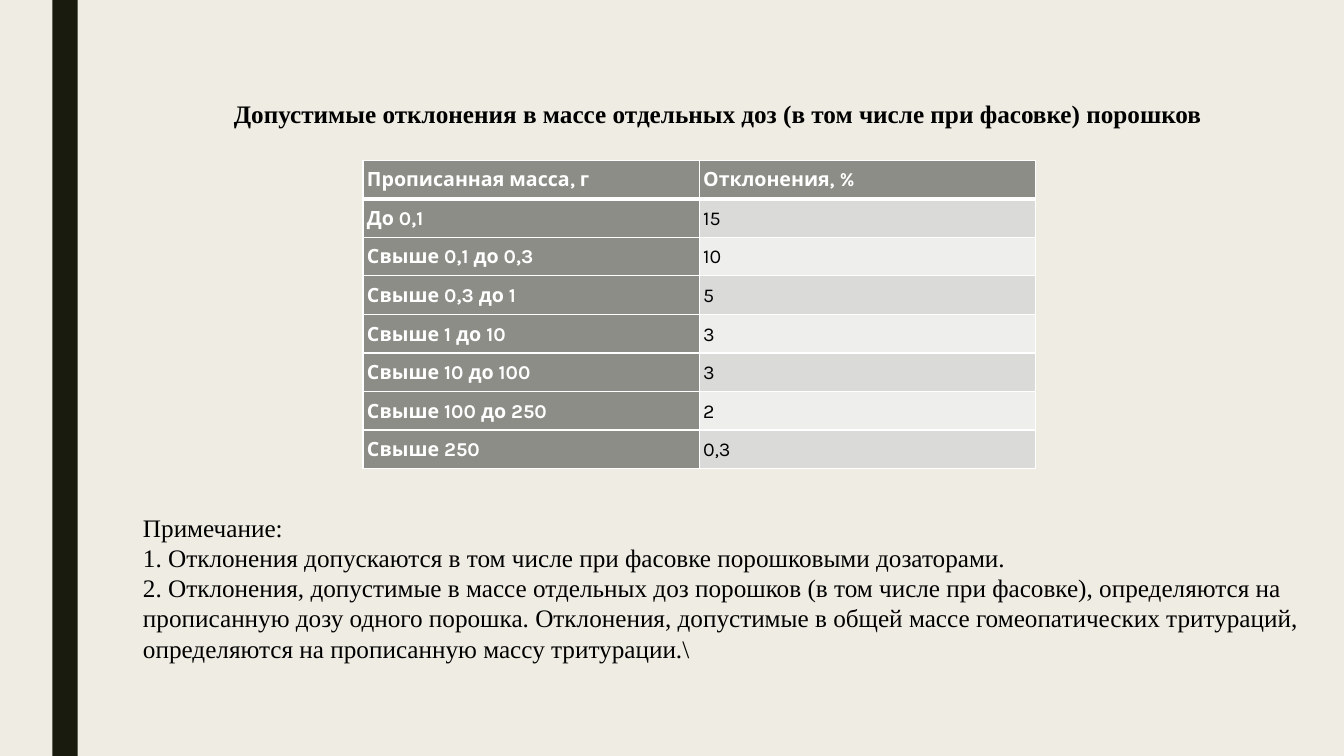
from lxml import etree
from pptx import Presentation
from pptx import util as u
from pptx.dml.color import RGBColor
from pptx.enum import shapes, text
from pptx.oxml.ns import qn

COLORS = {"background": "EFEDE3", "bar": "191B0E", "heading": "8C8D86",
          "odd": "DADBD9", "even": "EEEEED", "white": "FFFFFF", "black": "000000"}
ROWS = [("Прописанная масса, г", "Отклонения, %"),
        ("До 0,1", "15"),
        ("Свыше 0,1 до 0,3", "10"),
        ("Свыше 0,3 до 1", "5"),
        ("Свыше 1 до 10", "3"),
        ("Свыше 10 до 100", "3"),
        ("Свыше 100 до 250", "2"),
        ("Свыше 250", "0,3")]
NOTES = [
    "Примечание:",
    "1. Отклонения допускаются в том числе при фасовке порошковыми дозаторами.",
    "2. Отклонения, допустимые в массе отдельных доз порошков (в том числе при фасовке), "
    "определяются на прописанную дозу одного порошка. Отклонения, допустимые в общей массе "
    "гомеопатических тритураций, определяются на прописанную массу тритурации.\\",
]


def style(p, font, size, color, bold=False):
    """Format every run of a paragraph."""
    for r in p.runs:
        r.font.name = font
        r.font.size = u.Pt(size)
        r.font.bold = bold
        r.font.color.rgb = RGBColor.from_string(COLORS[color])


def add_borders(cell, widths):
    """Draw white cell borders; widths maps a side (L, R, T, B) to points."""
    tc_pr = cell._tc.get_or_add_tcPr()
    for i, side in enumerate("LRTB"):
        ln = etree.Element(qn(f"a:ln{side}"), w=str(u.Pt(widths[side])))
        fill = etree.SubElement(ln, qn("a:solidFill"))
        etree.SubElement(fill, qn("a:srgbClr"), val=COLORS["white"])
        tc_pr.insert(i, ln)


prs = Presentation()
prs.slide_width, prs.slide_height = u.Inches(13.33), u.Inches(7.5)
s = prs.slides.add_slide(prs.slide_layouts[5])
s.background.fill.solid()
s.background.fill.fore_color.rgb = RGBColor.from_string(COLORS["background"])

# Side bar
bar = s.shapes.add_shape(shapes.MSO_SHAPE.RECTANGLE, u.Inches(0.52), 0,
                         u.Inches(0.25), prs.slide_height)
bar.shadow.inherit = False
bar.fill.solid()
bar.fill.fore_color.rgb = RGBColor.from_string(COLORS["bar"])
bar.line.fill.background()

# Title
title = s.shapes.title
title.left, title.top = u.Inches(2.22), u.Inches(0.93)
title.width, title.height = u.Inches(9.9), u.Inches(0.71)
tf = title.text_frame
tf.text = "Допустимые отклонения в массе отдельных доз (в том числе при фасовке) порошков"
tf.auto_size = text.MSO_AUTO_SIZE.NONE
tf.word_wrap = False
tf.vertical_anchor = text.MSO_ANCHOR.TOP
tf.paragraphs[0].alignment = text.PP_ALIGN.LEFT
style(tf.paragraphs[0], "Times New Roman", 18, "black", bold=True)

# Table of deviations
table = s.shapes.add_table(len(ROWS), 2, u.Inches(3.6), u.Inches(1.59),
                           u.Inches(6.67), u.Inches(3.05)).table
table.first_col = True
for i, row in enumerate(ROWS):
    table.rows[i].height = u.Inches(0.38)
    for j, value in enumerate(row):
        cell = table.cell(i, j)
        is_heading = i == 0 or j == 0
        cell.text = value
        cell.margin_left = cell.margin_right = u.Inches(0.04)
        cell.margin_top = cell.margin_bottom = u.Inches(0.07)
        cell.fill.solid()
        fill = "heading" if is_heading else "odd" if i % 2 else "even"
        cell.fill.fore_color.rgb = RGBColor.from_string(COLORS[fill])
        add_borders(cell, {"L": 1, "R": 1, "T": 3 if i == 1 else 1, "B": 3 if i == 0 else 1})
        p = cell.text_frame.paragraphs[0]
        p.line_spacing = 1.07
        style(p, "Karla", 14, "white" if is_heading else "black", bold=is_heading)

# Notes
tf = s.shapes.add_textbox(u.Inches(1.32), u.Inches(5.03),
                          u.Inches(11.7), u.Inches(1.92)).text_frame
tf.word_wrap = True
tf.text = "\n".join(NOTES)
for p in tf.paragraphs:
    style(p, "Times New Roman", 18, "black")

prs.save("out.pptx")
